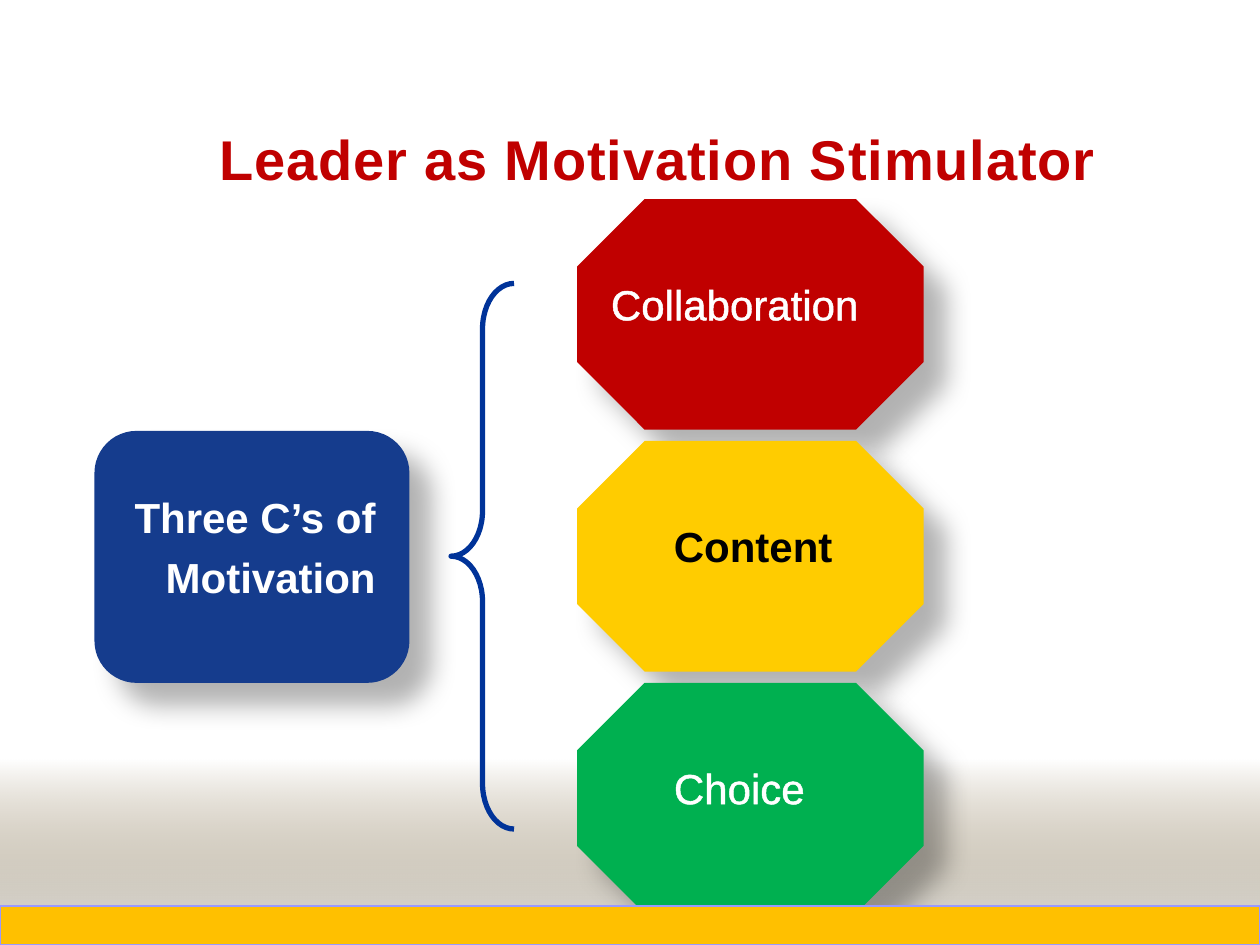
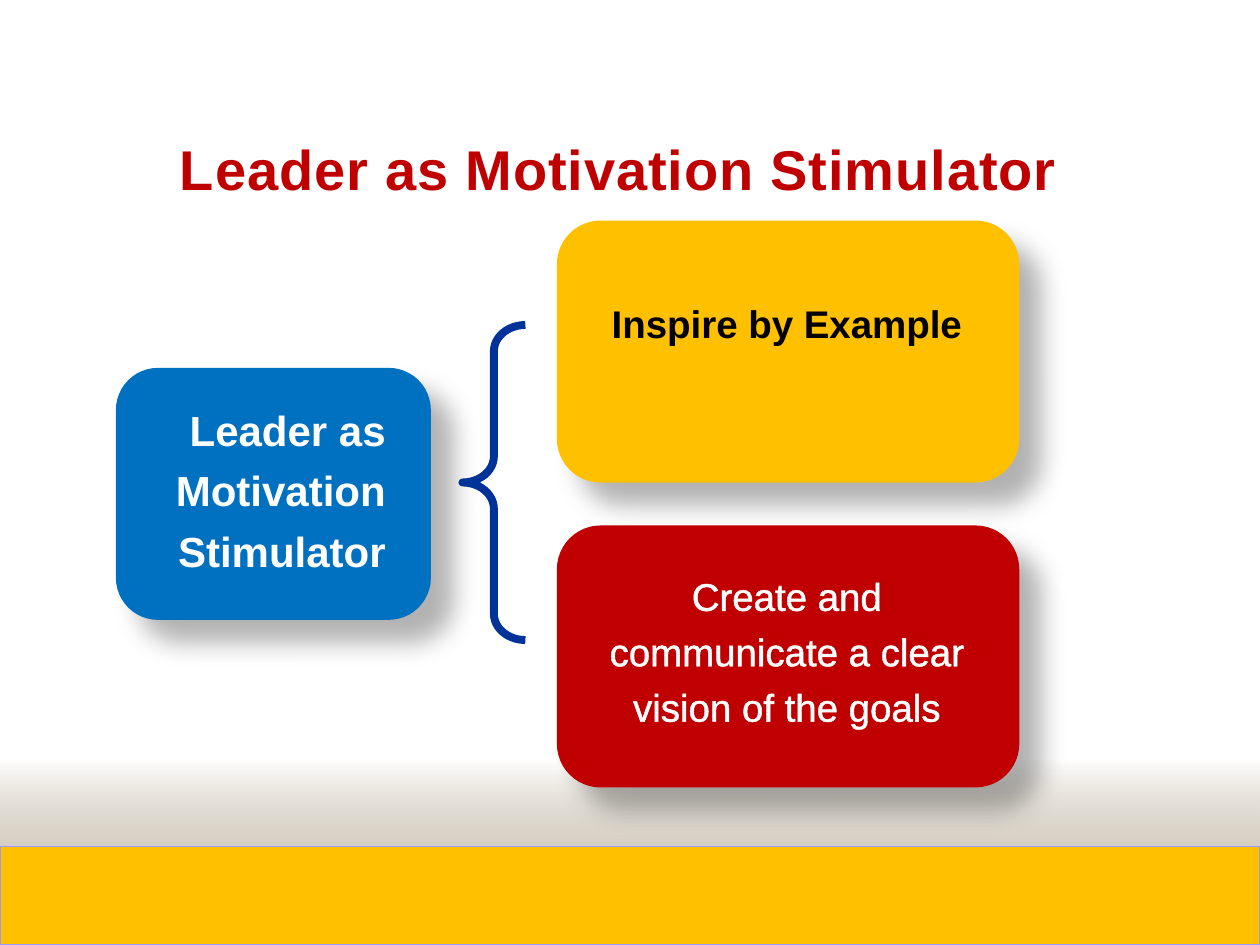
from lxml import etree
from pptx import Presentation
from pptx.dml.color import RGBColor
from pptx.enum.shapes import MSO_SHAPE
from pptx.enum.text import MSO_AUTO_SIZE, PP_ALIGN
from pptx.oxml.ns import qn
from pptx.util import Inches, Pt

RECTANGLE = MSO_SHAPE.RECTANGLE
ROUNDED = MSO_SHAPE.ROUNDED_RECTANGLE
OCTAGON = MSO_SHAPE.OCTAGON
LEFT_BRACE = MSO_SHAPE.LEFT_BRACE
FIT_SHAPE = MSO_AUTO_SIZE.SHAPE_TO_FIT_TEXT
LEFT, CENTER, RIGHT = PP_ALIGN.LEFT, PP_ALIGN.CENTER, PP_ALIGN.RIGHT

COLORS = {
    "red": "C00000", "amber": "FFC000", "yellow": "FFCC00",
    "green": "00B050", "navy": "153C8D", "blue": "0070C0",
    "brace": "003399", "band_line": "9999FF", "white": "FFFFFF",
    "black": "000000", "floor_top": "765E2F", "floor_bottom": "DDDDDD",
}
FONT = "Arial"
TITLE = "Leader as Motivation Stimulator"
SLIDE_W, SLIDE_H = 10, 7.5
CORNER = {ROUNDED: 0.167, OCTAGON: 0.293}


def rgb(name):
    return RGBColor.from_string(COLORS[name])


def xml_child(parent, tag, **attributes):
    child = etree.SubElement(parent, qn(tag))
    for key, value in attributes.items():
        child.set(key, str(value))
    return child


def add_figure(slide, preset, box, fill=None, line=None, line_pt=0.75):
    """Add a preset shape without shadow; fill and line are colour names."""
    figure = slide.shapes.add_shape(preset, *map(Inches, box))
    figure.shadow.inherit = False
    if fill:
        figure.fill.solid()
        figure.fill.fore_color.rgb = rgb(fill)
    else:
        figure.fill.background()
    if line:
        figure.line.color.rgb = rgb(line)
        figure.line.width = Pt(line_pt)
    else:
        figure.line.fill.background()
    return figure


def add_card(slide, preset, box, fill):
    """Add a filled shape that casts a soft shadow to the lower right."""
    card = add_figure(slide, preset, box, fill)
    card.adjustments[0] = CORNER[preset]
    effects = card._element.spPr.find(qn("a:effectLst"))
    shadow = xml_child(effects, "a:outerShdw", blurRad=Pt(15), dist=Pt(18),
                       dir=45 * 60000, algn="tl", rotWithShape=0)
    shade = xml_child(shadow, "a:srgbClr", val=COLORS["black"])
    xml_child(shade, "a:alpha", val=30000)


def add_text(slide, box, text, size, color, bold=True, align=LEFT,
             wrap=False, outlined=False, spacing=None):
    label = slide.shapes.add_textbox(*map(Inches, box))
    frame = label.text_frame
    frame.word_wrap = wrap
    frame.auto_size = FIT_SHAPE
    paragraph = frame.paragraphs[0]
    paragraph.alignment = align
    if wrap:
        paragraph.line_spacing = 1.2
    run = paragraph.add_run()
    run.text = text
    font = paragraph.font
    font.name, font.size, font.bold = FONT, Pt(size), bold
    font.color.rgb = rgb(color)
    run_properties = run._r.get_or_add_rPr()
    if spacing:
        run_properties.set("spc", str(round(spacing * 100)))
    if outlined:
        outline = xml_child(run_properties, "a:ln", w=Pt(1.45))
        fill = xml_child(outline, "a:solidFill")
        xml_child(fill, "a:srgbClr", val=COLORS[color])


def add_floor(slide):
    """Add the gradient that fades in above the bottom edge."""
    top = 6.03
    floor = add_figure(slide, RECTANGLE, (0, top, SLIDE_W, SLIDE_H - top))
    properties = floor._element.spPr
    gradient = etree.Element(qn("a:gradFill"), rotWithShape="1")
    stops = xml_child(gradient, "a:gsLst")
    start = xml_child(xml_child(stops, "a:gs", pos=0), "a:srgbClr",
                      val=COLORS["floor_top"])
    xml_child(start, "a:alpha", val=0)
    xml_child(xml_child(stops, "a:gs", pos=100000), "a:srgbClr",
              val=COLORS["floor_bottom"])
    xml_child(gradient, "a:lin", ang=90 * 60000, scaled=0)
    properties.replace(properties.find(qn("a:noFill")), gradient)


def add_title(slide, left, top):
    add_text(slide, (left, top, 7.22, 0.64), TITLE, 32, "red", spacing=0.5)


def add_brace(slide, box, line_pt, curve):
    brace = add_figure(slide, LEFT_BRACE, box, line="brace", line_pt=line_pt)
    brace.adjustments[0] = curve
    brace.adjustments[1] = 0.5


def add_topic(slide, left, top, fill, text, text_box):
    """Add the card left of the brace; text_box is relative to the card."""
    add_card(slide, ROUNDED, (left, top, 2.5, 2), fill)
    dx, dy, height = text_box
    add_text(slide, (left + dx, top + dy, 2.33, height), text, 24, "white",
             align=RIGHT, wrap=True)


def add_footer(slide, height):
    add_figure(slide, RECTANGLE, (0, SLIDE_H - height, SLIDE_W, height),
               "amber", "band_line")


def build_three_cs(slide):
    add_floor(slide)
    add_topic(slide, 0.75, 3.42, "navy", "Three C’s of Motivation",
              (0, 0.35, 1.06))
    add_title(slide, 1.64, 0.94)
    left, top, pitch = 4.58, 1.58, 1.92
    motives = [
        ("Collaboration", "red", "white", 0.17, 2.19),
        ("Content", "yellow", "black", 0.67, 1.46),
        ("Choice", "green", "white", 0.67, 1.25),
    ]
    for row, (_, fill, *_) in enumerate(motives):
        add_card(slide, OCTAGON, (left, top + row * pitch, 2.75, 1.83), fill)
    for row, (motive, _, color, indent, width) in enumerate(motives):
        is_dark = color == "black"
        add_text(slide, (left + indent, top + row * pitch + 0.58, width, 0.5),
                 motive, 24, color, bold=is_dark, outlined=not is_dark)
    add_brace(slide, (3.58, 2.25, 0.5, 4.33), 3, 0.722)
    add_footer(slide, 0.31)


def build_leader_actions(slide):
    add_floor(slide)
    add_topic(slide, 0.92, 2.92, "blue", TITLE, (-0.09, 0.16, 1.54))
    add_title(slide, 1.33, 1.02)
    left, top, pitch = 4.42, 1.75, 2.42
    for row, fill in enumerate(("amber", "red")):
        add_card(slide, ROUNDED, (left, top + row * pitch, 3.67, 2.08), fill)
    add_text(slide, (left + 0.33, top + 0.58, 2.99, 0.47),
             "Inspire by Example", 22, "black", align=CENTER)
    add_text(slide, (left + 0.16, top + pitch + 0.25, 3.33, 1.42),
             "Create and communicate a clear vision of the goals", 22, "white",
             bold=False, align=CENTER, wrap=True, outlined=True)
    add_brace(slide, (3.67, 2.58, 0.5, 2.5), 4.5, 0.417)
    add_footer(slide, 0.78)


def main():
    deck = Presentation()
    deck.slide_width, deck.slide_height = Inches(SLIDE_W), Inches(SLIDE_H)
    blank = deck.slide_layouts[6]
    for build in (build_three_cs, build_leader_actions):
        build(deck.slides.add_slide(blank))
    deck.save("out.pptx")


if __name__ == "__main__":
    main()
